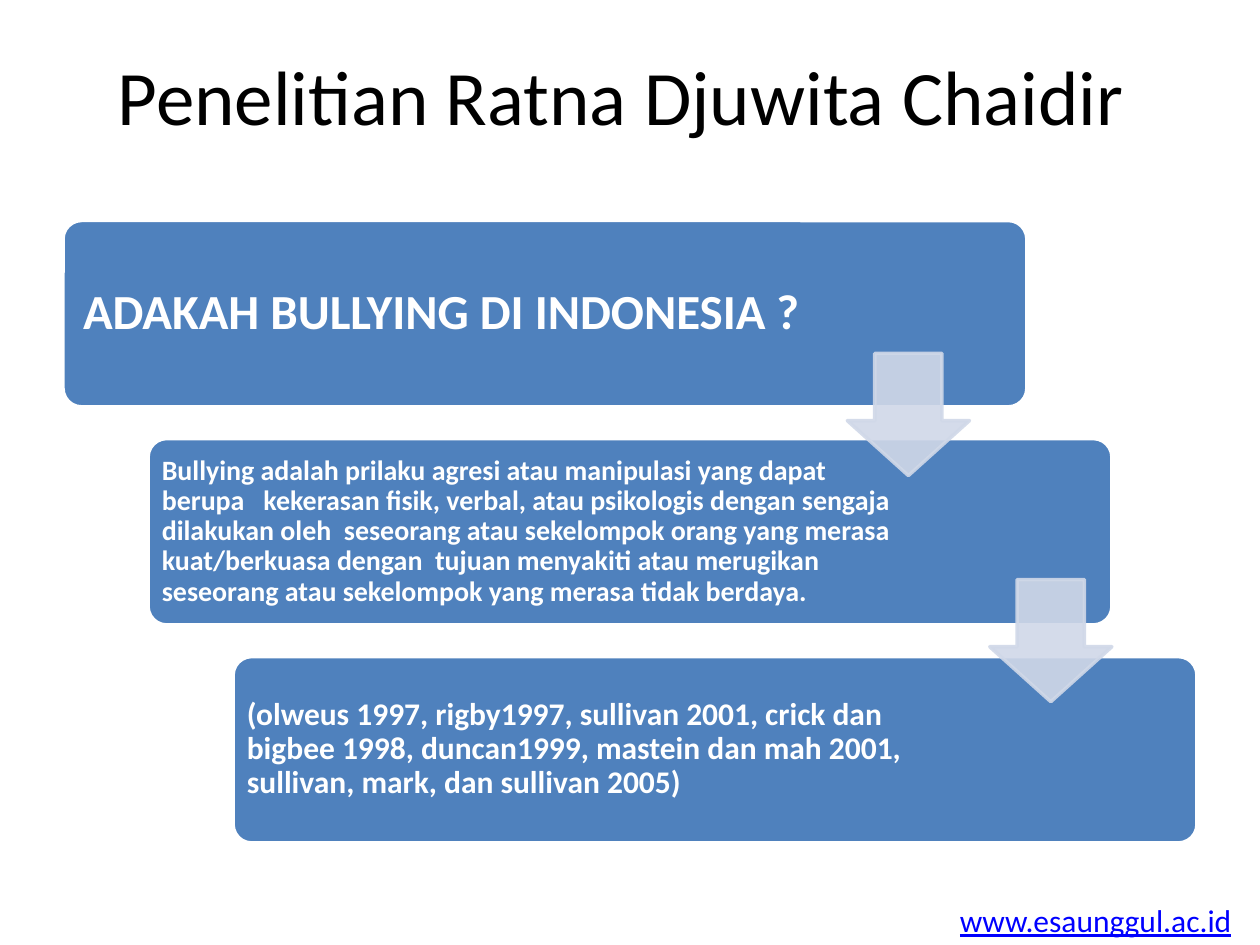
from dataclasses import dataclass

from lxml.etree import SubElement
from pptx import Presentation
from pptx.dml.color import RGBColor
from pptx.enum.shapes import MSO_SHAPE
from pptx.enum.text import MSO_ANCHOR, PP_ALIGN
from pptx.oxml.ns import qn
from pptx.util import Pt


@dataclass(frozen=True)
class Theme:
    font: str = "Calibri"
    ink: RGBColor = RGBColor(0x00, 0x00, 0x00)
    white: RGBColor = RGBColor(0xFF, 0xFF, 0xFF)
    blue: RGBColor = RGBColor(0x4F, 0x81, 0xBD)
    pale: RGBColor = RGBColor(0xD0, 0xD8, 0xE8)
    link: RGBColor = RGBColor(0x00, 0x00, 0xFF)
    title_size: float = 44
    question_size: float = 28
    definition_size: float = 16
    small_size: float = 18
    outline: float = 2


@dataclass(frozen=True)
class Box:
    left: float
    top: float
    width: float
    height: float

    def lengths(self) -> list:
        return [Pt(v) for v in (self.left, self.top, self.width, self.height)]


@dataclass(frozen=True)
class Step:
    text: str
    size: float
    text_width: float
    inset: float


T = Theme()

STEPS = [
    Step("ADAKAH BULLYING DI INDONESIA ?", T.question_size, 435.6, 8.4),
    Step("Bullying adalah prilaku agresi atau manipulasi yang dapat "
         "berupa   kekerasan fisik, verbal, atau psikologis dengan sengaja "
         "dilakukan oleh  seseorang atau sekelompok orang yang merasa "
         "kuat/berkuasa dengan  tujuan menyakiti atau merugikan "
         "seseorang atau sekelompok yang merasa tidak berdaya.",
         T.definition_size, 426.24, 4.8),
    Step("(olweus 1997, rigby1997, sullivan 2001, crick dan bigbee 1998, "
         "duncan1999, mastein dan mah 2001, sullivan, mark, dan sullivan 2005)",
         T.small_size, 426.24, 4.8),
]

# Staircase geometry
LEFT, TOP, WIDTH, HEIGHT = 36, 126, 550.8, 106.5
STEP_X, STEP_Y = 48.6, 124.6
PAD = 3.1
ARROW_LEFT, ARROW_TOP, ARROW_SIZE = 484.2, 202, 69.8
ARROW_STEP_X, ARROW_STEP_Y = 81.4, 129.2


def add_text(s, box: Box, text: str, font: dict, frame: dict, para: dict) -> None:
    tf = s.shapes.add_textbox(*box.lengths()).text_frame
    p = tf.paragraphs[0]
    r = p.add_run()
    r.text = text
    formats = ((tf, {"word_wrap": True, **frame}), (p, para),
               (r.font, {"name": T.font, **font}))
    for target, values in formats:
        for name, value in values.items():
            setattr(target, name, value)
    r.font.color.rgb = font_color(font)


def font_color(font: dict) -> RGBColor:
    if font.get("underline"):
        return T.link
    return T.white if font.get("bold") else T.ink


def add_preset(s, kind: MSO_SHAPE, box: Box, fill: RGBColor, line: RGBColor,
               adjustments: tuple, opacity: int = 100) -> None:
    sp = s.shapes.add_shape(kind, *box.lengths())
    sp.shadow.inherit = False
    for i, value in enumerate(adjustments):
        sp.adjustments[i] = value
    sp.fill.solid()
    sp.fill.fore_color.rgb = fill
    sp.line.color.rgb = line
    sp.line.width = Pt(T.outline)
    if opacity < 100:
        for color in sp.element.spPr.iter(qn("a:srgbClr")):
            SubElement(color, qn("a:alpha"), val=str(opacity * 1000))


def add_step(s, i: int, step: Step) -> None:
    left, top = LEFT + i * STEP_X, TOP + i * STEP_Y
    add_preset(s, MSO_SHAPE.ROUNDED_RECTANGLE, Box(left, top, WIDTH, HEIGHT),
               T.blue, T.white, (0.1,))
    margins = {f"margin_{side}": Pt(step.inset)
               for side in ("left", "top", "right", "bottom")}
    add_text(s, Box(left + PAD, top + PAD, step.text_width, HEIGHT - 2 * PAD),
             step.text, {"size": Pt(step.size), "bold": True},
             {"vertical_anchor": MSO_ANCHOR.MIDDLE, **margins},
             {"line_spacing": 0.9})


def add_arrow(s, i: int) -> None:
    box = Box(ARROW_LEFT + i * ARROW_STEP_X, ARROW_TOP + i * ARROW_STEP_Y,
              ARROW_SIZE, ARROW_SIZE)
    add_preset(s, MSO_SHAPE.DOWN_ARROW, box, T.pale, T.pale, (0.55, 0.45), 90)


def main() -> None:
    prs = Presentation()
    prs.slide_width, prs.slide_height = Pt(720), Pt(540)
    s = prs.slides.add_slide(prs.slide_layouts[6])

    # Web address and title
    add_text(s, Box(541.4, 511.2, 171.4, 28.8), "www.esaunggul.ac.id",
             {"size": Pt(T.small_size), "underline": True},
             {"word_wrap": False}, {})
    add_text(s, Box(36, 21.6, 648, 90), "Penelitian Ratna Djuwita Chaidir ",
             {"size": Pt(T.title_size)}, {"margin_top": Pt(6)},
             {"alignment": PP_ALIGN.CENTER})

    # Staircase of statements, then the arrows on top
    for i, step in enumerate(STEPS):
        add_step(s, i, step)
    for i in range(len(STEPS) - 1):
        add_arrow(s, i)

    prs.save("out.pptx")


if __name__ == "__main__":
    main()
